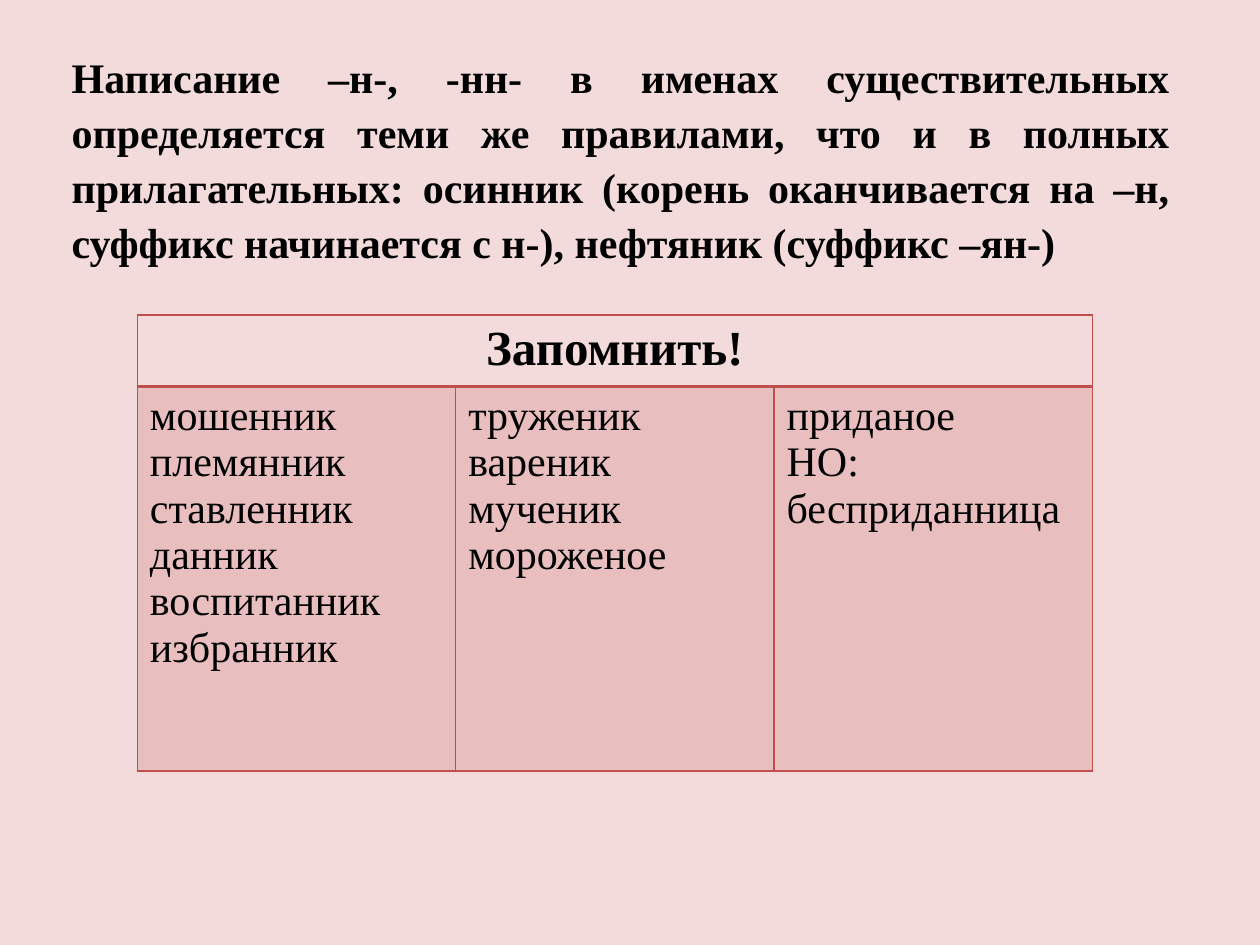
from lxml.etree import SubElement
from pptx import Presentation
from pptx.dml.color import RGBColor
from pptx.enum.text import MSO_ANCHOR, PP_ALIGN
from pptx.oxml.ns import qn
from pptx.util import Inches, Pt

BLACK = RGBColor(0x00, 0x00, 0x00)
PALE_PINK = RGBColor(0xF2, 0xDB, 0xDA)
ROSE = RGBColor(0xE8, 0xBF, 0xBE)
RED = RGBColor(0xC0, 0x50, 0x4D)

RULE = (
    "Написание –н-, -нн- в именах существительных определяется теми же правилами, "
    "что и в полных прилагательных: осинник (корень оканчивается на –н, "
    "суффикс начинается с н-), нефтяник (суффикс –ян-)"
)
HEADING = "Запомнить!"
WORD_COLUMNS = [
    ["мошенник", "племянник", "ставленник", "данник", "воспитанник", "избранник"],
    ["труженик", "вареник", "мученик", "мороженое"],
    ["приданое", "НО: бесприданница"],
]


class SlideBuilder:
    """Holds the slide and its style, with lengths given in a 100 by 75 grid."""

    font = "Times New Roman"
    unit = Inches(0.1)

    def __init__(self, presentation):
        presentation.slide_width = 100 * self.unit
        presentation.slide_height = 75 * self.unit
        self.slide = presentation.slides.add_slide(presentation.slide_layouts[6])
        background = self.slide.background.fill
        background.solid()
        background.fore_color.rgb = PALE_PINK

    def grid(self, *lengths):
        return [round(length * self.unit) for length in lengths]

    def set_text(self, text_frame, lines, size, bold=False, alignment=PP_ALIGN.LEFT):
        text_frame.text = "\n".join(lines)
        for paragraph in text_frame.paragraphs:
            paragraph.alignment = alignment
            for run in paragraph.runs:
                run.font.name = self.font
                run.font.size = Pt(size)
                run.font.bold = bold
                run.font.color.rgb = BLACK

    def title(self, text, left, top, width, height):
        shape = self.slide.shapes.add_textbox(*self.grid(left, top, width, height))
        text_frame = shape.text_frame
        text_frame.word_wrap = True
        text_frame.vertical_anchor = MSO_ANCHOR.MIDDLE
        self.set_text(text_frame, [text], 24, True, PP_ALIGN.JUSTIFY)
        text_frame.paragraphs[0].line_spacing = 1.09

    def borders(self, cell, top=1, bottom=1):
        properties = cell._tc.get_or_add_tcPr()
        widths = {"a:lnL": 1, "a:lnR": 1, "a:lnT": top, "a:lnB": bottom}
        for position, (tag, width) in enumerate(widths.items()):
            line = SubElement(properties, qn(tag), w=str(int(Pt(width))))
            fill = SubElement(line, qn("a:solidFill"))
            SubElement(fill, qn("a:srgbClr"), val=str(RED))
            properties.insert(position, line)

    def word_table(self, heading, word_columns, left, top, width, row_heights):
        count = len(word_columns)
        position = self.grid(left, top, width, sum(row_heights))
        table = self.slide.shapes.add_table(2, count, *position).table
        table.first_row = table.horz_banding = False
        for row, height in zip(table.rows, self.grid(*row_heights)):
            row.height = height
        header = table.cell(0, 0)
        header.merge(table.cell(0, count - 1))
        self.set_text(header.text_frame, [heading], 28, True, PP_ALIGN.CENTER)
        for column, words in enumerate(word_columns):
            upper, lower = table.cell(0, column), table.cell(1, column)
            upper.fill.background()
            lower.fill.solid()
            lower.fill.fore_color.rgb = ROSE
            self.borders(upper, bottom=2)
            self.borders(lower, top=2)
            self.set_text(lower.text_frame, words, 24)


def main():
    presentation = Presentation()
    builder = SlideBuilder(presentation)
    builder.title(RULE, 4.7, 3, 89.1, 18.9)
    builder.word_table(HEADING, WORD_COLUMNS, 10.9, 25, 75.8, [5.3, 30.5])
    presentation.save("out.pptx")


if __name__ == "__main__":
    main()
